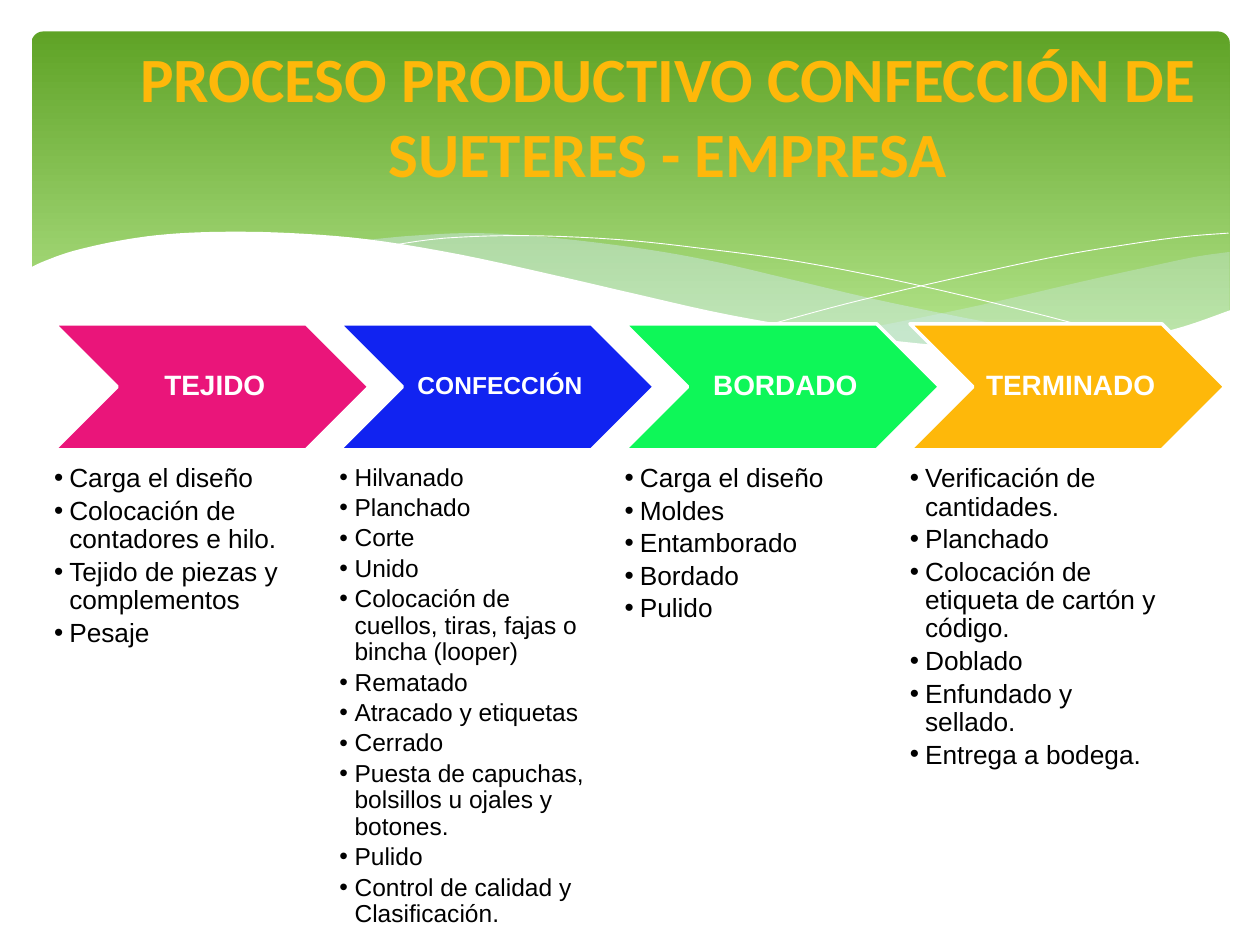
from dataclasses import dataclass

import pptx
import pptx.util
from lxml import etree
from pptx.dml.color import RGBColor
from pptx.enum.shapes import MSO_SHAPE
from pptx.enum.text import MSO_ANCHOR, MSO_AUTO_SIZE, PP_ALIGN
from pptx.oxml.ns import qn

WHITE = RGBColor(0xFF, 0xFF, 0xFF)
BLACK = RGBColor(0x00, 0x00, 0x00)
GREEN_DARK = RGBColor(0x5F, 0xA3, 0x26)
GREEN_LIGHT = RGBColor(0xB2, 0xE3, 0x89)
MIST = RGBColor(0xD6, 0xEC, 0xFF)
AMBER = RGBColor(0xFE, 0xB8, 0x0A)
PINK = RGBColor(0xEA, 0x15, 0x7A)
BLUE = RGBColor(0x11, 0x23, 0xF1)
LIME = RGBColor(0x0E, 0xF7, 0x58)

# The slide is a grid of 10 columns by 7.5 rows, one square unit each
UNIT = pptx.util.Inches(1)
COLS, ROWS = 10, 7.5
STAGE_LEFT, STAGE_STEP = 0.43, 2.264
CHEVRON_TOP, CHEVRON_W, CHEVRON_H = 2.57, 2.5, 1
LIST_TOP, LIST_W, LIST_H = 3.69, 2, 3.6
INDENT = 0.12

Knots = list[tuple[float, float]]


@dataclass
class Stage:
    name: str
    color: RGBColor
    name_size: int
    list_size: int
    tasks: list[str]


@dataclass
class Wave:
    edges: list[Knots]
    color: RGBColor
    opacity: int = 100
    filled: bool = True


STAGES = [
    Stage("TEJIDO", PINK, 16, 15, [
        "Carga el diseño", "Colocación de contadores e hilo.",
        "Tejido de piezas y complementos", "Pesaje"]),
    Stage("CONFECCIÓN", BLUE, 14, 14, [
        "Hilvanado", "Planchado", "Corte", "Unido",
        "Colocación de cuellos, tiras, fajas o bincha (looper)",
        "Rematado", "Atracado y etiquetas", "Cerrado",
        "Puesta de capuchas, bolsillos u ojales y botones.",
        "Pulido", "Control de calidad y Clasificación."]),
    Stage("BORDADO", LIME, 16, 15, [
        "Carga el diseño", "Moldes", "Entamborado", "Bordado", "Pulido"]),
    Stage("TERMINADO", AMBER, 16, 15, [
        "Verificación de cantidades.", "Planchado",
        "Colocación de etiqueta de cartón y código.",
        "Doblado", "Enfundado y sellado.", "Entrega a bodega."]),
]

# Each wave is a chain of smooth edges through a few knots
WAVES = [
    Wave([[(9.76, 2), (9.48, 2.04), (9.06, 2.13), (8.61, 2.23), (7.79, 2.42),
           (7.06, 2.57), (6.61, 2.65)],
          [(6.61, 2.65), (7.05, 2.71), (7.57, 2.76), (8.14, 2.78),
           (8.72, 2.74), (9.21, 2.65), (9.49, 2.57), (9.76, 2.47)]], MIST, 29),
    Wave([[(8.93, 2.73), (8.07, 2.6), (7.06, 2.4), (6.29, 2.22), (5.69, 2.08),
           (5.14, 1.98), (4.42, 1.89), (3.8, 1.85), (3.28, 1.87), (2.86, 1.91)],
          [(2.86, 1.91), (3.42, 1.99), (4.04, 2.11), (4.91, 2.32), (5.66, 2.48),
           (6.5, 2.64), (7.22, 2.74), (7.85, 2.78), (8.38, 2.78),
           (8.93, 2.73)]], MIST, 40),
    Wave([[(3.09, 1.95), (3.53, 1.89), (4.16, 1.87), (4.89, 1.9), (5.56, 1.97),
           (6.36, 2.08), (7.27, 2.26), (8.31, 2.51), (9.07, 2.72)]],
         WHITE, filled=False),
    Wave([[(6.13, 2.57), (6.72, 2.41), (7.48, 2.23), (8.36, 2.04), (8.95, 1.94),
           (9.38, 1.88), (9.75, 1.85)]], WHITE, filled=False),
    Wave([[(9.77, 2.46), (9.4, 2.59), (8.99, 2.69), (8.5, 2.75), (8.09, 2.77),
           (7.44, 2.74), (6.68, 2.65), (5.79, 2.5), (5.03, 2.33), (4.47, 2.2),
           (3.65, 2.02), (2.92, 1.9), (2.3, 1.85), (1.77, 1.84), (1.32, 1.86),
           (0.95, 1.91), (0.59, 1.99), (0.36, 2.07), (0.23, 2.13)],
          [(0.23, 3.29), (9.77, 3.29)]], WHITE),
]


def units(*lengths: float) -> list[int]:
    return [round(n * UNIT) for n in lengths]


def place(sp, x: float, y: float, w: float, h: float) -> None:
    sp.left, sp.top, sp.width, sp.height = units(x, y, w, h)


def smooth(knots: Knots, steps: int = 5) -> Knots:
    """Catmull-Rom curve through the knots."""
    ends = [knots[0], *knots, knots[-1]]
    points = [knots[0]]
    for a, b, c, d in zip(ends, ends[1:], ends[2:], ends[3:]):
        for t in (i / steps for i in range(1, steps + 1)):
            points.append(tuple(
                q + 0.5 * t * (r - p + t * (2 * p - 5 * q + 4 * r - u
                                            + t * (3 * (q - r) + u - p)))
                for p, q, r, u in zip(a, b, c, d)))
    return points


def add_wave(s, wave: Wave) -> None:
    points = [units(*pt) for edge in wave.edges for pt in smooth(edge)]
    builder = s.shapes.build_freeform(*points[0])
    builder.add_line_segments(points[1:], close=wave.filled)
    sp = builder.convert_to_shape()
    sp.shadow.inherit = False
    if not wave.filled:
        sp.fill.background()
        sp.line.color.rgb = wave.color
        sp.line.width = pptx.util.Pt(0.5)
        return
    sp.line.fill.background()
    sp.fill.solid()
    sp.fill.fore_color.rgb = wave.color
    if wave.opacity < 100:
        color = sp.fill._xPr.find(qn("a:solidFill"))[0]
        etree.SubElement(color, qn("a:alpha"), val=str(wave.opacity * 1000))


def add_banner(s) -> None:
    sp = s.shapes.add_shape(MSO_SHAPE.ROUNDED_RECTANGLE, *units(0.25, 0.25, 9.51, 2.7))
    sp.adjustments[0] = 0.034
    sp.shadow.inherit = False
    sp.line.fill.background()
    sp.fill.gradient()
    sp.fill.gradient_angle = 270
    for stop, pos, color in zip(sp.fill.gradient_stops, (0, 0.9), (GREEN_DARK, GREEN_LIGHT)):
        stop.position, stop.color.rgb = pos, color


def add_run(p, text: str, font: str, size: int, color: RGBColor, bold: bool) -> None:
    r = p.add_run()
    r.text = text
    r.font.name, r.font.size, r.font.bold = font, pptx.util.Pt(size), bold
    r.font.color.rgb = color


def setup_frame(tf, anchor: MSO_ANCHOR, left: float = 0, inset: float = 0) -> None:
    tf.word_wrap, tf.auto_size, tf.vertical_anchor = True, MSO_AUTO_SIZE.NONE, anchor
    tf.margin_left, tf.margin_top, tf.margin_right, tf.margin_bottom = units(
        left, inset, inset, inset)


def add_chevron(s, stage: Stage, x: float) -> None:
    sp = s.shapes.add_shape(MSO_SHAPE.CHEVRON, *units(x, CHEVRON_TOP, CHEVRON_W, CHEVRON_H))
    sp.shadow.inherit = False
    sp.fill.solid()
    sp.fill.fore_color.rgb = stage.color
    sp.line.color.rgb = WHITE
    sp.line.width = pptx.util.Pt(2)
    setup_frame(sp.text_frame, MSO_ANCHOR.MIDDLE, 0.07, 0.02)
    p = sp.text_frame.paragraphs[0]
    p.alignment, p.line_spacing = PP_ALIGN.CENTER, 0.9
    add_run(p, stage.name, "Arial", stage.name_size, WHITE, True)


def fill_list(sp, stage: Stage, x: float) -> None:
    place(sp, x, LIST_TOP, LIST_W, LIST_H)
    tf = sp.text_frame
    setup_frame(tf, MSO_ANCHOR.TOP)
    for i, task in enumerate(stage.tasks):
        p = tf.add_paragraph() if i else tf.paragraphs[0]
        p.line_spacing, p.space_before = 0.9, pptx.util.Pt(0)
        p.space_after = pptx.util.Pt(stage.list_size * 0.16)
        pPr = p._p.get_or_add_pPr()
        indent = units(INDENT)[0]
        pPr.set("marL", str(indent))
        pPr.set("indent", str(-indent))
        etree.SubElement(pPr, qn("a:buFont"), typeface="Arial")
        etree.SubElement(pPr, qn("a:buChar"), char="•")
        add_run(p, task, "Arial", stage.list_size, BLACK, False)


def main() -> None:
    prs = pptx.Presentation()
    prs.slide_width, prs.slide_height = units(COLS, ROWS)
    s = prs.slides.add_slide(prs.slide_layouts[4])
    title, *lists = s.placeholders

    # Green banner with waves
    add_banner(s)
    for wave in WAVES:
        add_wave(s, wave)

    # Title, brought in front of the banner
    s.shapes._spTree.append(title._element)
    place(title, 0.7, 0.3, 9.2, 1.22)
    setup_frame(title.text_frame, MSO_ANCHOR.MIDDLE)
    p = title.text_frame.paragraphs[0]
    p.alignment = PP_ALIGN.CENTER
    add_run(p, "PROCESO PRODUCTIVO CONFECCIÓN DE SUETERES - EMPRESA", "Calibri", 36, AMBER, True)

    # Stages with their tasks
    for i, (stage, sp) in enumerate(zip(STAGES, lists)):
        x = STAGE_LEFT + i * STAGE_STEP
        add_chevron(s, stage, x)
        fill_list(sp, stage, x)

    prs.save("out.pptx")


if __name__ == "__main__":
    main()
